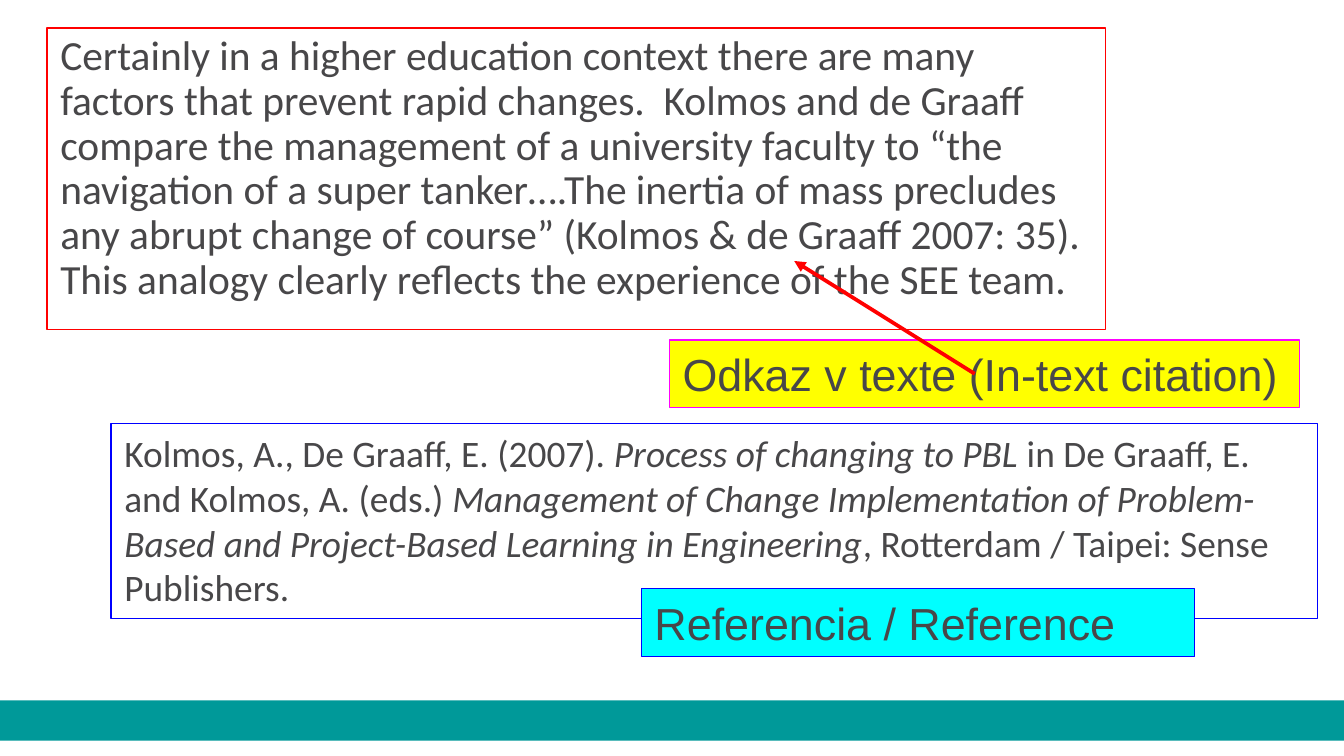
from dataclasses import dataclass
from typing import Optional

from lxml import etree
from pptx import Presentation
from pptx.dml.color import RGBColor
from pptx.enum.shapes import MSO_CONNECTOR, MSO_SHAPE
from pptx.enum.text import MSO_ANCHOR, PP_ALIGN
from pptx.oxml.ns import qn
from pptx.util import Cm, Pt

RECT = MSO_SHAPE.RECTANGLE
STRAIGHT = MSO_CONNECTOR.STRAIGHT
TOP = MSO_ANCHOR.TOP
LEFT = PP_ALIGN.LEFT

TEXT, RED, BLUE = "484749", "FF0000", "0000FF"
MAGENTA, YELLOW, CYAN, TEAL = "FF00FF", "FFFF00", "00FFFF", "009999"


@dataclass
class Box:
    left: float
    top: float
    width: float
    height: float
    fill: Optional[str] = None
    line: Optional[str] = None


def color(value: str) -> RGBColor:
    return RGBColor.from_string(value)


def add_box(slide, box: Box):
    sp = slide.shapes.add_shape(RECT, Cm(box.left), Cm(box.top), Cm(box.width), Cm(box.height))
    sp.shadow.inherit = False
    if box.fill:
        sp.fill.solid()
        sp.fill.fore_color.rgb = color(box.fill)
    else:
        sp.fill.background()
    if box.line:
        sp.line.color.rgb = color(box.line)
        sp.line.width = Pt(0.75)
    else:
        sp.line.fill.background()
    return sp


def add_text(sp, *parts: str, font: str, size: float, spacing: float = 1.0) -> None:
    """Write the parts as one paragraph, every second part in italics."""
    tf = sp.text_frame
    tf.word_wrap = True
    tf.vertical_anchor = TOP
    p = tf.paragraphs[0]
    p.alignment = LEFT
    p.line_spacing = spacing
    for i, part in enumerate(parts):
        r = p.add_run()
        r.text = part
        r.font.name = font
        r.font.size = Pt(size)
        r.font.italic = i % 2 == 1
        r.font.color.rgb = color(TEXT)


def add_arrow(slide, x1: float, y1: float, x2: float, y2: float, line: str) -> None:
    arrow = slide.shapes.add_connector(STRAIGHT, Cm(x1), Cm(y1), Cm(x2), Cm(y2))
    arrow.line.color.rgb = color(line)
    arrow.line.width = Pt(2)
    etree.SubElement(arrow.line._get_or_add_ln(), qn("a:tailEnd"), type="triangle")
    etree.SubElement(arrow._element.spPr, qn("a:effectLst"))


def main() -> None:
    prs = Presentation()
    prs.slide_width, prs.slide_height = Cm(25.4), Cm(14.28)
    slide = prs.slides.add_slide(prs.slide_layouts[6])

    add_box(slide, Box(0, 13.23, 25.4, 0.76, fill=TEAL))

    quotation = add_box(slide, Box(0.89, 0.53, 20.01, 5.69, line=RED))
    add_text(
        quotation,
        "Certainly in a higher education context there are many factors that prevent "
        "rapid changes.  Kolmos and de Graaff compare the management of a university "
        "faculty to “the navigation of a super tanker….The inertia of mass precludes "
        "any abrupt change of course” (Kolmos & de Graaff 2007: 35).  This analogy "
        "clearly reflects the experience of the SEE team.",
        font="Calibri", size=22.2, spacing=0.9,
    )

    reference = add_box(slide, Box(2.1, 8, 22.8, 3.68, line=BLUE))
    add_text(
        reference,
        "Kolmos, A., De Graaff, E. (2007). ",
        "Process of changing to PBL ",
        "in De Graaff, E. and Kolmos, A. (eds.) ",
        "Management of Change Implementation of Problem-Based and Project-Based "
        "Learning in Engineering",
        ", Rotterdam / Taipei: Sense Publishers.",
        font="Calibri", size=20,
    )

    citation_label = add_box(slide, Box(12.65, 6.42, 11.91, 1.28, YELLOW, MAGENTA))
    add_text(citation_label, "Odkaz v texte (In-text citation)", font="Arial", size=24)

    reference_label = add_box(slide, Box(12.12, 11.12, 10.46, 1.28, CYAN, BLUE))
    add_text(reference_label, "Referencia / Reference", font="Arial", size=24)

    add_arrow(slide, 18.42, 7.06, 15.01, 4.93, RED)

    prs.save("out.pptx")


if __name__ == "__main__":
    main()
